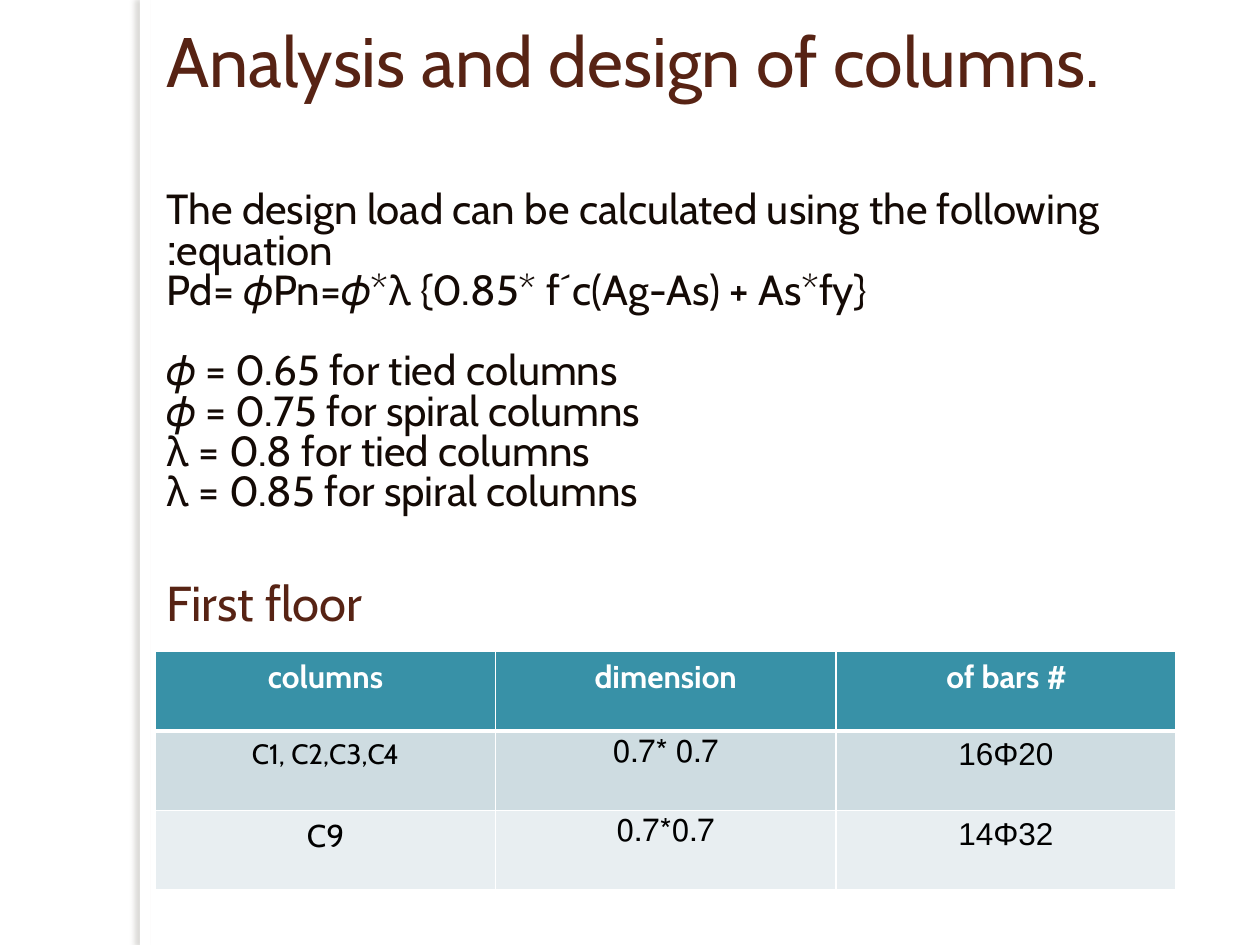
from lxml.etree import SubElement
from pptx import Presentation
from pptx.dml.color import RGBColor
from pptx.enum.shapes import MSO_SHAPE
from pptx.enum.text import MSO_ANCHOR, PP_ALIGN
from pptx.oxml.ns import qn
from pptx.util import Pt

FONT = "Cabin"
WHITE, BROWN, INK, BLACK = "FFFFFF", "572314", "140A05", "000000"
HEADER_FILL = "3891A7"
ROW_FILLS = ["CEDCE1", "E8EEF1"]

EQUATION_LINES = [
    "The design load can be calculated using the following equation:",
    "Pd= 𝜙Pn=𝜙*λ {0.85* f´c(Ag-As) + As*fy}",
    "𝜙 = 0.65 for tied columns",
    "𝜙 = 0.75 for spiral columns",
    "λ = 0.8 for tied columns",
    "λ = 0.85 for spiral columns",
]
# Gap in points above each line
EQUATION_GAPS = [52, 0, 23, 0, 0, 0]

# Each cell: text, size, font, right-to-left
HEADER = [(text, 18, FONT, True) for text in ("columns", "dimension", "# of bars")]
ROWS = [
    [("C1, C2,C3,C4", 16, FONT, False), ("0.7 *0.7", 18, "Arial", True),
     ("16Φ20", 18, "Arial", False)],
    [("C9", 18, FONT, True), ("0.7*0.7", 18, "Arial", True),
     ("14Φ32", 18, "Arial", False)],
]


def color(value):
    return RGBColor.from_string(value)


def write(para, text, size, tint, font=FONT, bold=False, rtl=False,
          align=PP_ALIGN.LEFT, gap=0, spacing=1.0):
    para.alignment = align
    para.space_before = Pt(gap)
    para.line_spacing = spacing
    if rtl:
        para._p.get_or_add_pPr().set("rtl", "1")
    span = para.add_run()
    span.text = text
    span.font.size = Pt(size)
    span.font.name = font
    span.font.bold = bold
    span.font.color.rgb = color(tint)


def add_side_strip(page, left, top, width, height):
    strip = page.shapes.add_shape(MSO_SHAPE.RECTANGLE, Pt(left), Pt(top),
                                  Pt(width), Pt(height))
    strip.fill.solid()
    strip.fill.fore_color.rgb = color(WHITE)
    strip.line.fill.background()
    # Soft shadow falling to the left
    strip.shadow.inherit = False
    effects = strip._element.spPr.find(qn("a:effectLst"))
    shadow = SubElement(effects, qn("a:outerShdw"), blurRad=str(Pt(3)),
                        dist=str(Pt(3)), dir=str(180 * 60000), rotWithShape="0")
    tint = SubElement(shadow, qn("a:srgbClr"), val="736F63")
    SubElement(tint, qn("a:alpha"), val="25000")


def add_text(page, left, top, width, height):
    box = page.shapes.add_textbox(Pt(left), Pt(top), Pt(width), Pt(height))
    frame = box.text_frame
    frame.word_wrap = True
    frame.vertical_anchor = MSO_ANCHOR.TOP
    # Title
    write(frame.paragraphs[0], "Analysis and design of columns.", 40, BROWN)
    # Equation and its factors
    for line, gap in zip(EQUATION_LINES, EQUATION_GAPS):
        write(frame.add_paragraph(), line, 24, INK, rtl=True, gap=gap, spacing=0.8)
    # Table heading
    write(frame.add_paragraph(), "First floor", 28, BROWN, gap=33)


def add_borders(cell, bottom):
    properties = cell._tc.get_or_add_tcPr()
    for side, weight in (("L", 1), ("R", 1), ("T", 1), ("B", bottom)):
        line = SubElement(properties, qn(f"a:ln{side}"), w=str(Pt(weight)))
        fill = SubElement(line, qn("a:solidFill"))
        SubElement(fill, qn("a:srgbClr"), val=WHITE)


def add_column_table(page, left, top, width, height):
    rows = [HEADER] + ROWS
    table = page.shapes.add_table(len(rows), len(HEADER), Pt(left), Pt(top),
                                  Pt(width), Pt(height)).table
    for row, (values, fill) in enumerate(zip(rows, [HEADER_FILL] + ROW_FILLS)):
        is_header = row == 0
        for column, (text, size, font, rtl) in enumerate(values):
            cell = table.cell(row, column)
            add_borders(cell, bottom=3 if is_header else 1)
            cell.fill.solid()
            cell.fill.fore_color.rgb = color(fill)
            write(cell.text_frame.paragraphs[0], text, size,
                  WHITE if is_header else BLACK, font, bold=is_header,
                  rtl=rtl, align=PP_ALIGN.CENTER)


def main():
    deck = Presentation()
    deck.slide_width, deck.slide_height = Pt(720), Pt(540)
    page = deck.slides.add_slide(deck.slide_layouts[6])
    add_side_strip(page, 80, 0, 6, 540)
    add_text(page, 88, 6.5, 623.5, 466)
    add_column_table(page, 88.8, 372.4, 583.2, 136)
    deck.save("out.pptx")


if __name__ == "__main__":
    main()
